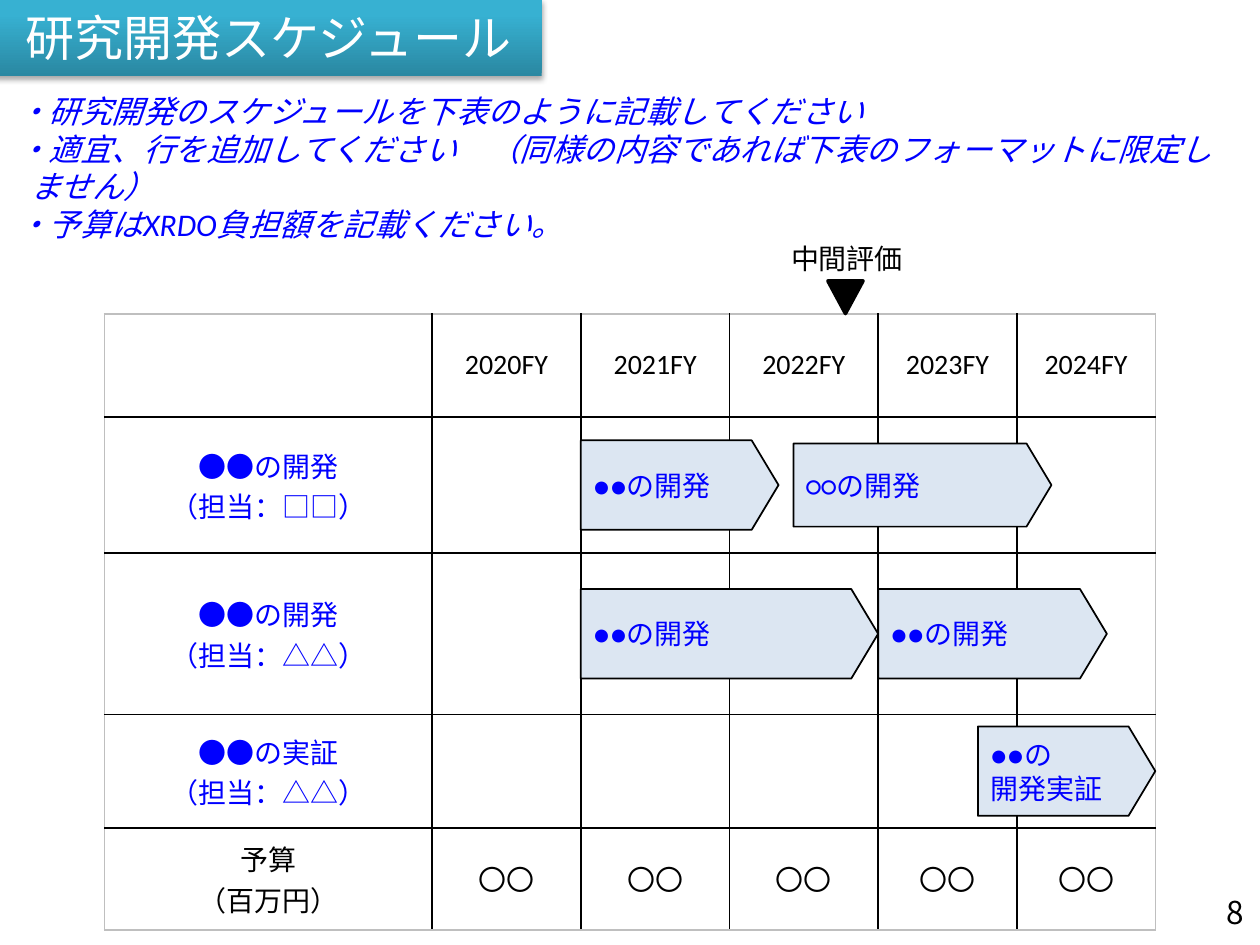
from lxml import etree
from pptx import Presentation
from pptx import util as u
from pptx.dml.color import RGBColor
from pptx.enum import shapes, text
from pptx.oxml import parse_xml
from pptx.oxml.ns import nsdecls, qn

COLORS = {
    "black": "000000", "blue": "0000FF", "white": "FFFFFF", "bar": "DCE6F2",
    "frame": "BFBFBF", "title_dark": "2A88A2", "title_light": "37B1D2",
}
LATIN, CJK = "Calibri", "Noto Sans CJK JP"
LEFT, TOP = 0.83, 2.49
COLS = [2.6, 1.18, 1.18, 1.18, 1.1, 1.1]
ROWS = [0.82, 1.08, 1.28, 0.9, 0.81]
FIRST_YEAR = 2020
YEARS = range(FIRST_YEAR, FIRST_YEAR + 5)
TASKS = ["●●の開発\n（担当：□□）", "●●の開発\n（担当：△△）", "●●の実証\n（担当：△△）"]
NOTES = """・研究開発のスケジュールを下表のように記載してください
・適宜、行を追加してください　（同様の内容であれば下表のフォーマットに限定しません）
・予算はXRDO負担額を記載ください。"""
# table row, start and end in years, height, label
BARS = [
    (2, 2023, 2024.65, 0.71, "●●の開発"),
    (1, 2021, 2022.33, 0.71, "●●の開発"),
    (2, 2021, 2023, 0.71, "●●の開発"),
    (3, 2023.72, 2025, 0.71, "●●の\n開発実証"),
    (1, 2022.43, 2024.25, 0.66, "○○の開発"),
]


def rgb(name):
    return RGBColor.from_string(COLORS[name])


def inches(*values):
    return [u.Inches(v) for v in values]


def year_x(year):
    """Horizontal position of a point in time on the table's year columns."""
    whole = min(int(year) - FIRST_YEAR, len(YEARS) - 1)
    part = year - FIRST_YEAR - whole
    return LEFT + sum(COLS[:whole + 1]) + part * COLS[whole + 1]


def write(tf, words, size=16, font=LATIN, color="black", align=None,
          italic=None, hanging=0, anchor=None, margin=None, wrap=True):
    tf.word_wrap = wrap
    if anchor is not None:
        tf.vertical_anchor = anchor
    if margin is not None:
        tf.margin_left = tf.margin_right = tf.margin_top = tf.margin_bottom = margin
    for i, line in enumerate(words.split("\n")):
        p = tf.add_paragraph() if i else tf.paragraphs[0]
        p.alignment = align
        if hanging:
            pPr = p._p.get_or_add_pPr()
            pPr.set("marL", str(u.Inches(hanging)))
            pPr.set("indent", str(-u.Inches(hanging)))
        r = p.add_run()
        r.text = line
        r.font.size = u.Pt(size)
        r.font.name = font
        r.font.italic = italic
        r.font.color.rgb = rgb(color)
        etree.SubElement(r._r.rPr, qn("a:ea")).set("typeface", font)


def add_text(s, box, words, **style):
    write(s.shapes.add_textbox(*inches(*box)).text_frame, words, **style)


def add_shape(s, kind, box, fill, line_width):
    sp = s.shapes.add_shape(kind, *inches(*box))
    sp.shadow.inherit = False
    sp.fill.solid()
    sp.fill.fore_color.rgb = rgb(fill)
    sp.line.color.rgb = rgb("black")
    sp.line.width = u.Pt(line_width)
    return sp


def add_title(s, words):
    title = s.shapes.title
    title.left, title.top, title.width, title.height = inches(-0.04, -0.01, 4.34, 0.61)
    title.fill.gradient()
    title.fill.gradient_angle = 90
    for stop, name, position in zip(title.fill.gradient_stops,
                                    ("title_dark", "title_light"), (0, 0.8)):
        stop.color.rgb = rgb(name)
        stop.position = position
    title._element.spPr.append(parse_xml(
        f'<a:effectLst {nsdecls("a")}><a:outerShdw blurRad="39370" dist="22860" '
        'dir="5400000" rotWithShape="0"><a:srgbClr val="000000">'
        '<a:alpha val="35000"/></a:srgbClr></a:outerShdw></a:effectLst>'))
    title.text_frame.auto_size = text.MSO_AUTO_SIZE.NONE
    write(title.text_frame, words, size=28, color="white",
          align=text.PP_ALIGN.CENTER, anchor=text.MSO_ANCHOR.MIDDLE)


def set_borders(cell, sides):
    tcPr = cell._tc.get_or_add_tcPr()
    for i, (side, color) in enumerate(sides.items()):
        tcPr.insert(i, parse_xml(
            f'<a:ln{side} {nsdecls("a")} w="12700"><a:solidFill>'
            f'<a:srgbClr val="{COLORS[color]}"/></a:solidFill></a:ln{side}>'))


def add_schedule(s):
    blank = [""] * len(YEARS)
    rows = [["", *(f"{year}FY" for year in YEARS)],
            *([task, *blank] for task in TASKS),
            ["予算\n（百万円）", *(["〇〇"] * len(YEARS))]]
    table = s.shapes.add_table(len(ROWS), len(COLS), *inches(
        LEFT, TOP, sum(COLS), sum(ROWS))).table
    table.first_row = table.horz_banding = False
    for column, width in zip(table.columns, COLS):
        column.width = u.Inches(width)
    for i, (row, height) in enumerate(zip(rows, ROWS)):
        table.rows[i].height = u.Inches(height)
        for j, words in enumerate(row):
            cell = table.cell(i, j)
            cell.fill.background()
            edges = {"L": j == 0, "R": j == len(COLS) - 1,
                     "T": i == 0, "B": i == len(ROWS) - 1}
            set_borders(cell, {side: "frame" if outer else "black"
                               for side, outer in edges.items()})
            cell.margin_left = cell.margin_right = cell.margin_top = cell.margin_bottom = 0
            cell.vertical_anchor = text.MSO_ANCHOR.MIDDLE
            if words:
                write(cell.text_frame, words, font=CJK if i else LATIN,
                      color="blue" if words in TASKS else "black",
                      align=text.PP_ALIGN.CENTER)


def add_bar(s, row, start, end, height, words):
    """Draw a task arrow centred in its table row."""
    left = year_x(start)
    top = TOP + sum(ROWS[:row]) + (ROWS[row] - height) / 2
    bar = add_shape(s, shapes.MSO_SHAPE.PENTAGON,
                    (left, top, year_x(end) - left, height), "bar", 1)
    bar.adjustments[0] = 0.3
    write(bar.text_frame, words, color="blue", align=text.PP_ALIGN.LEFT,
          hanging=0.1, anchor=text.MSO_ANCHOR.MIDDLE)


def add_milestone(s, words):
    marker = add_shape(s, shapes.MSO_SHAPE.ISOSCELES_TRIANGLE,
                       (6.57, TOP - 0.26, 0.28, 0.26), "black", 2)
    marker._element.spPr.xfrm.set("flipV", "1")
    add_text(s, (6.18, 1.87, 1.1, 0.37), words, wrap=False)


def main():
    prs = Presentation()
    prs.slide_width, prs.slide_height = inches(10, 7.5)
    s = prs.slides.add_slide(prs.slide_layouts[5])
    add_title(s, "研究開発スケジュール")
    add_schedule(s)
    for bar in BARS:
        add_bar(s, *bar)
    add_milestone(s, "中間評価")
    add_text(s, (0.04, 0.68, 9.83, 1.01), NOTES, size=18, color="blue",
             italic=True, hanging=0.1)
    add_text(s, (9.29, 7.11, 0.58, 0.25), "8", size=18, font=CJK, margin=0,
             align=text.PP_ALIGN.RIGHT, anchor=text.MSO_ANCHOR.MIDDLE)
    prs.save("out.pptx")


if __name__ == "__main__":
    main()
